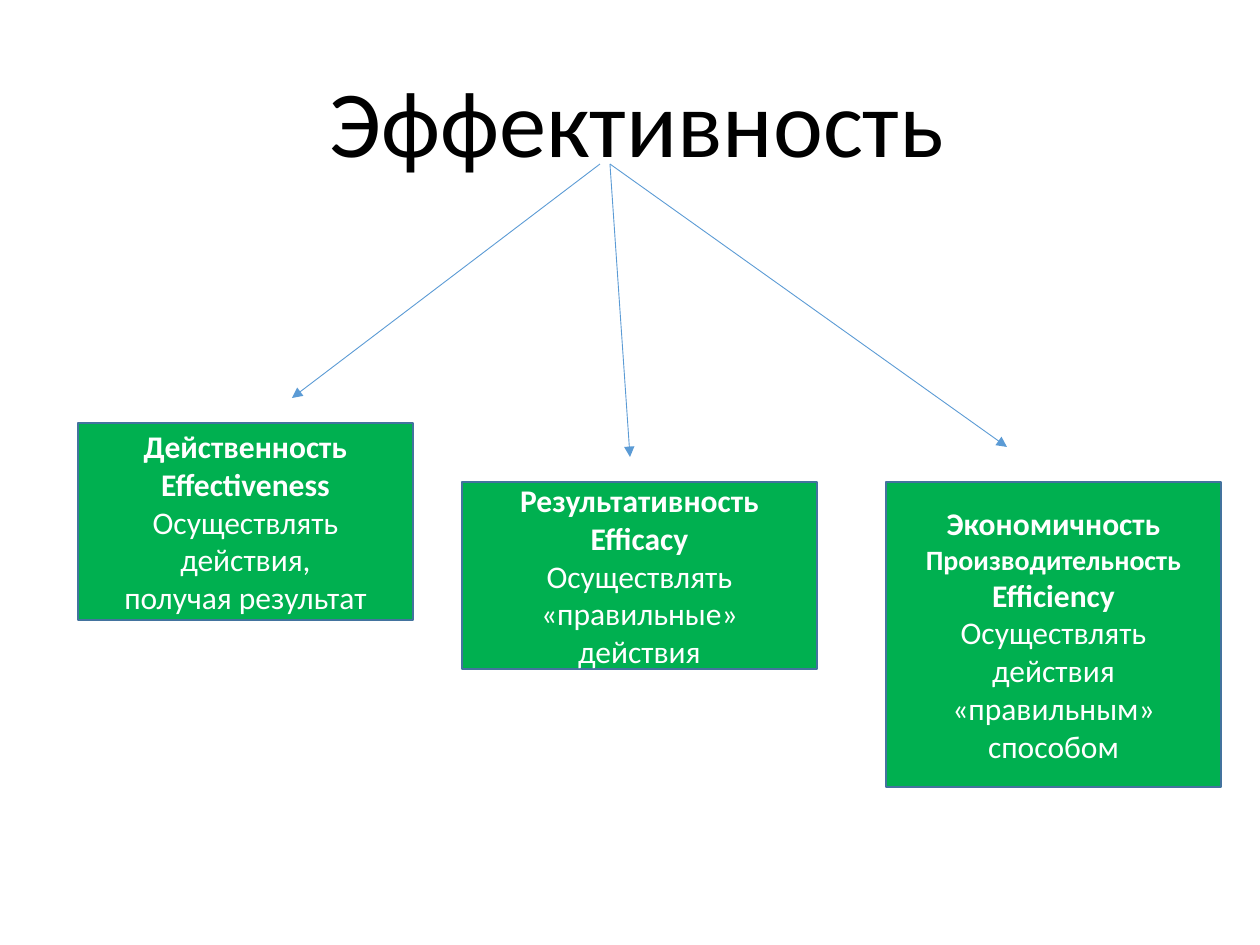
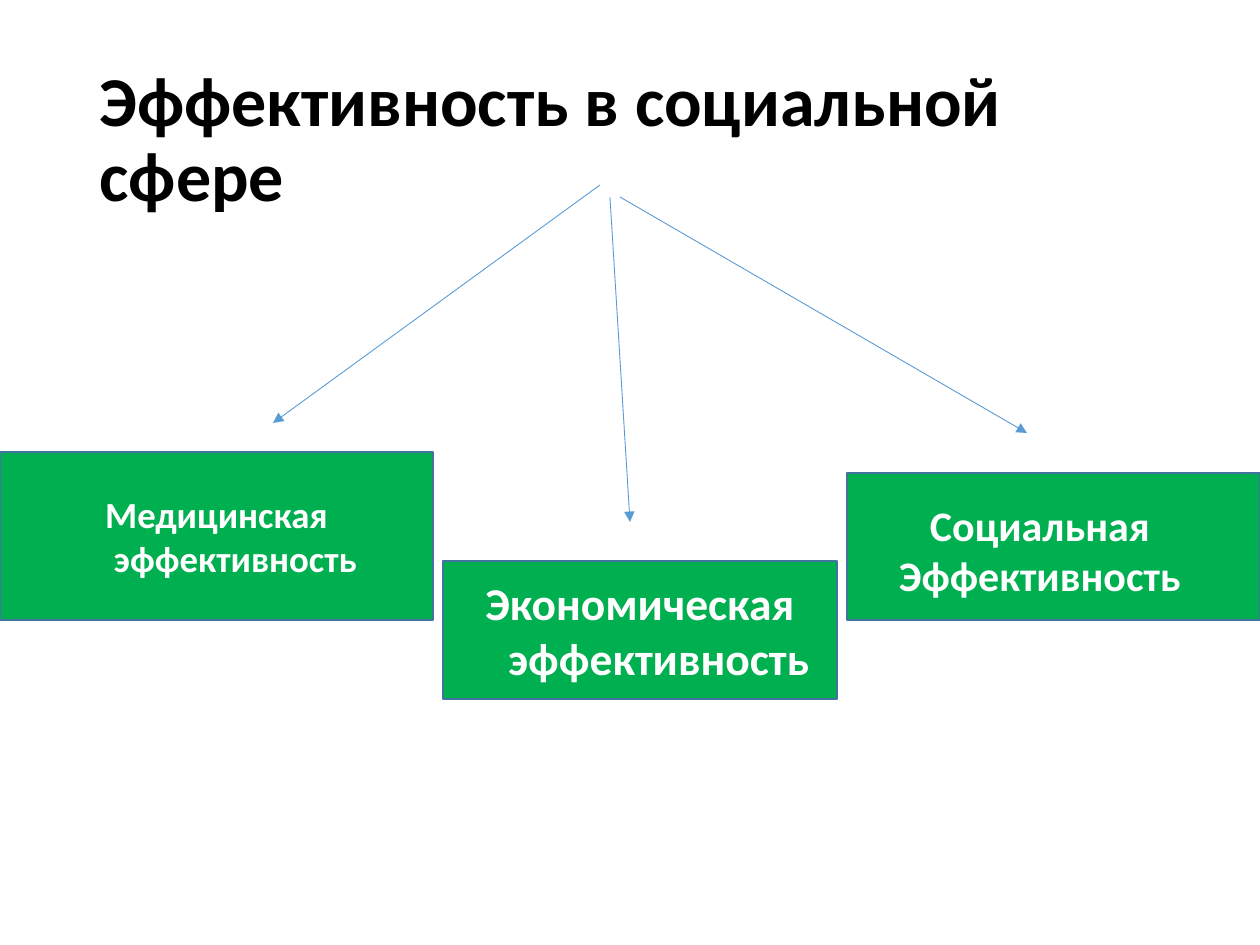
"""Build two slides that split effectiveness into its kinds."""
from dataclasses import dataclass
from typing import NamedTuple

from lxml import etree
from pptx import Presentation
from pptx.dml.color import RGBColor
from pptx.enum.shapes import MSO_CONNECTOR, MSO_SHAPE
from pptx.enum.text import MSO_ANCHOR, MSO_AUTO_SIZE, PP_ALIGN
from pptx.oxml.ns import qn
from pptx.util import Emu, Pt

RECT = MSO_SHAPE.RECTANGLE
STRAIGHT = MSO_CONNECTOR.STRAIGHT
LEFT, CENTER = PP_ALIGN.LEFT, PP_ALIGN.CENTER
TOP, MIDDLE = MSO_ANCHOR.TOP, MSO_ANCHOR.MIDDLE
NO_FIT = MSO_AUTO_SIZE.NONE
PX_PER_INCH = 126
TITLE_ONLY = 5


@dataclass(frozen=True)
class Theme:
    """Colours, font and type sizes of the deck."""
    font: str = "Calibri"
    ink: str = "000000"
    paper: str = "FFFFFF"
    box: str = "00B050"
    border: str = "43739E"
    arrow: str = "5B9BD5"
    border_width: float = 1
    arrow_width: float = 0.5
    title_leading: float = 0.9
    title_large: int = 54
    title: int = 40
    body: int = 18
    small: int = 16
    medical: int = 21
    economic: int = 26
    social: int = 24


THEME = Theme()


class Area(NamedTuple):
    """Left, top, width and height in px."""
    x: int
    y: int
    w: int
    h: int


class Line(NamedTuple):
    """One paragraph of a box."""
    text: str
    size: int = THEME.body
    bold: bool = False


class Box(NamedTuple):
    """A green box with its paragraphs."""
    area: Area
    lines: tuple[Line, ...] = ()
    hang: int = 0


class Arrow(NamedTuple):
    """Start and end of an arrow in px."""
    x1: int
    y1: int
    x2: int
    y2: int


class Title(NamedTuple):
    """A slide title and its format."""
    text: str
    area: Area
    size: int
    bold: bool
    align: PP_ALIGN


class Label(NamedTuple):
    """Free text laid over a box."""
    area: Area
    lines: tuple[Line, ...]


class Page(NamedTuple):
    """Everything one slide shows."""
    title: Title
    boxes: tuple[Box, ...]
    arrows: tuple[Arrow, ...]
    labels: tuple[Label, ...] = ()


PAGES = (
    Page(
        Title("Эффективность", Area(94, 35, 1086, 183), THEME.title_large, False, CENTER),
        (
            Box(Area(78, 423, 335, 197), (
                Line("Действенность", bold=True),
                Line("Effectiveness", bold=True),
                Line("Осуществлять действия,"),
                Line("получая результат"),
            )),
            Box(Area(462, 482, 355, 187), (
                Line("Результативность", bold=True),
                Line("Efficacy", bold=True),
                Line("Осуществлять"),
                Line("«правильные»"),
                Line("действия"),
            )),
            Box(Area(886, 482, 335, 305), (
                Line("Экономичность", bold=True),
                Line("Производительность", THEME.small, True),
                Line("Efficiency", bold=True),
                Line("Осуществлять действия"),
                Line("«правильным» способом"),
            )),
        ),
        (Arrow(600, 164, 292, 398), Arrow(610, 164, 630, 457), Arrow(610, 164, 1007, 447)),
    ),
    Page(
        Title("Эффективность в социальной сфере", Area(87, 50, 1086, 183),
              THEME.title, True, LEFT),
        (
            Box(Area(0, 452, 433, 168),
                (Line("Медицинская эффективность", THEME.medical, True),), hang=38),
            Box(Area(443, 561, 394, 138),
                (Line("Экономическая эффективность", THEME.economic, True),), hang=38),
            Box(Area(847, 473, 413, 147)),
        ),
        (Arrow(600, 185, 273, 423), Arrow(610, 197, 630, 522), Arrow(620, 197, 1027, 433)),
        (
            Label(Area(837, 493, 406, 152), (
                Line("Социальная", THEME.social, True),
                Line("Эффективность", THEME.social, True),
            )),
        ),
    ),
)


def px(n: int) -> Emu:
    """Turn px into EMU."""
    return Emu(round(n * 914400 / PX_PER_INCH))


def rgb(color: str) -> RGBColor:
    """Turn a hex string into a colour."""
    return RGBColor.from_string(color)


def write(p, text: str, *, size: int, color: str, bold: bool = False,
          align: PP_ALIGN = CENTER, hang: int = 0, leading: float | None = None) -> None:
    """Put formatted text into a paragraph."""
    p.alignment = align
    if leading:
        p.line_spacing = leading
    if hang:
        pPr = p._p.get_or_add_pPr()
        pPr.set("marL", str(px(hang)))
        pPr.set("indent", str(-px(hang)))
    r = p.add_run()
    r.text = text
    r.font.name = THEME.font
    r.font.size = Pt(size)
    r.font.bold = bold
    r.font.color.rgb = rgb(color)


def fill_frame(tf, lines: tuple[Line, ...], *, anchor: MSO_ANCHOR, hang: int = 0) -> None:
    """Write white centred lines into a text frame."""
    tf.word_wrap = True
    tf.vertical_anchor = anchor
    for i, line in enumerate(lines):
        p = tf.add_paragraph() if i else tf.paragraphs[0]
        write(p, line.text, size=line.size, bold=line.bold, color=THEME.paper, hang=hang)


def draw_title(s, title: Title) -> None:
    """Move and format the title placeholder."""
    sp = s.shapes.title
    sp.left, sp.top, sp.width, sp.height = map(px, title.area)
    tf = sp.text_frame
    tf.word_wrap = True
    tf.auto_size = NO_FIT
    tf.vertical_anchor = MIDDLE
    write(tf.paragraphs[0], title.text, size=title.size, bold=title.bold,
          color=THEME.ink, align=title.align, leading=THEME.title_leading)


def draw_box(s, box: Box) -> None:
    """Draw a green box with its text."""
    sp = s.shapes.add_shape(RECT, *map(px, box.area))
    sp.shadow.inherit = False
    sp.fill.solid()
    sp.fill.fore_color.rgb = rgb(THEME.box)
    sp.line.color.rgb = rgb(THEME.border)
    sp.line.width = Pt(THEME.border_width)
    fill_frame(sp.text_frame, box.lines, anchor=MIDDLE, hang=box.hang)


def draw_label(s, label: Label) -> None:
    """Draw free text."""
    sp = s.shapes.add_textbox(*map(px, label.area))
    fill_frame(sp.text_frame, label.lines, anchor=TOP)


def draw_arrow(s, arrow: Arrow) -> None:
    """Draw a thin arrow with a triangular head."""
    sp = s.shapes.add_connector(STRAIGHT, *map(px, arrow))
    sp.line.color.rgb = rgb(THEME.arrow)
    sp.line.width = Pt(THEME.arrow_width)
    spPr = sp._element.spPr
    etree.SubElement(spPr.find(qn("a:ln")), qn("a:tailEnd"), type="triangle")
    etree.SubElement(spPr, qn("a:effectLst"))


def draw_page(prs, page: Page) -> None:
    """Add one slide."""
    s = prs.slides.add_slide(prs.slide_layouts[TITLE_ONLY])
    s.background.fill.solid()
    s.background.fill.fore_color.rgb = rgb(THEME.paper)
    draw_title(s, page.title)
    for box in page.boxes:
        draw_box(s, box)
    for label in page.labels:
        draw_label(s, label)
    for arrow in page.arrows:
        draw_arrow(s, arrow)


def main() -> None:
    """Build and save the deck."""
    prs = Presentation()
    prs.slide_width, prs.slide_height = px(1260), px(945)
    for page in PAGES:
        draw_page(prs, page)
    prs.save("out.pptx")


if __name__ == "__main__":
    main()
